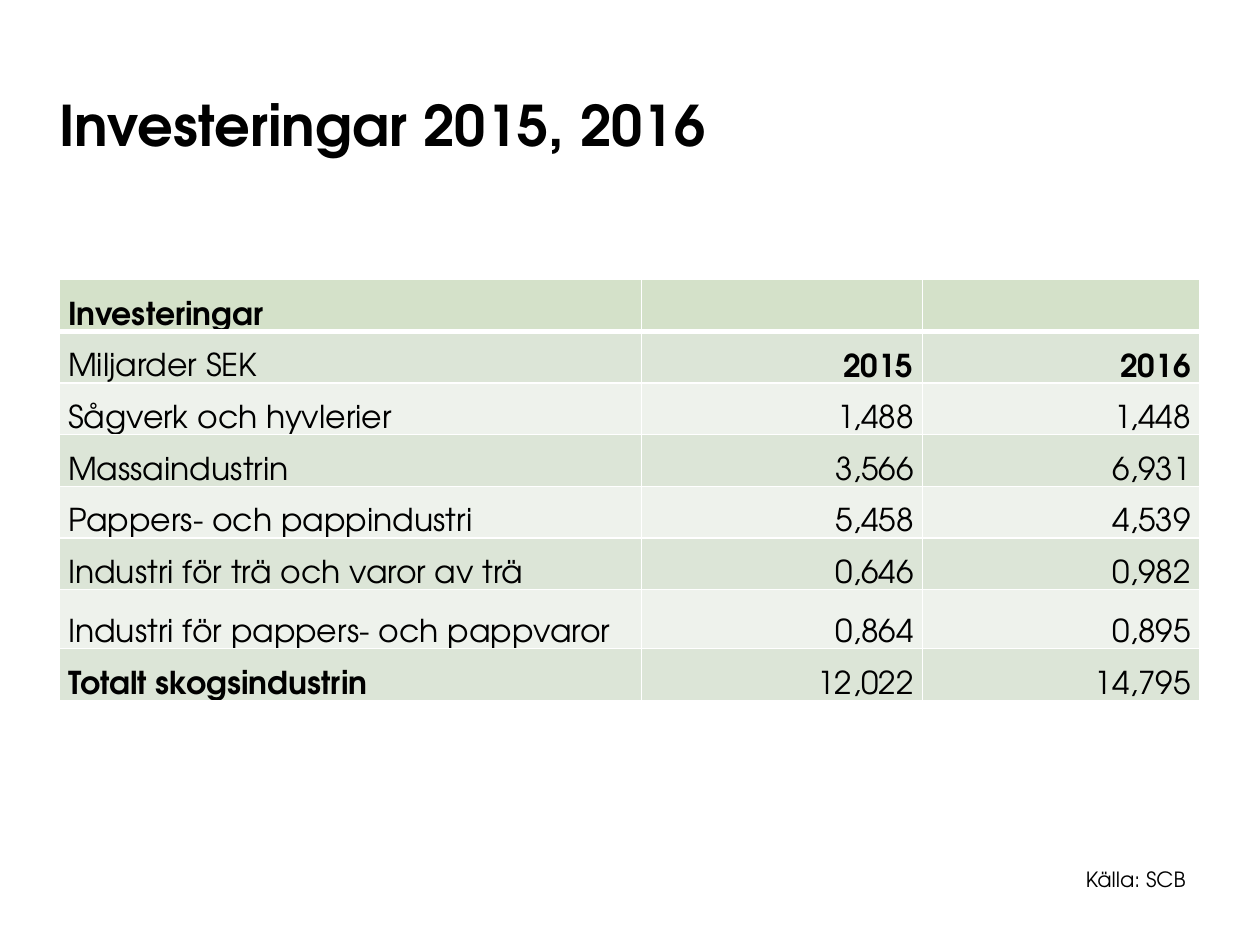
from lxml.etree import SubElement
from pptx import Presentation
from pptx.dml.color import RGBColor
from pptx.enum.text import MSO_ANCHOR, MSO_AUTO_SIZE, PP_ALIGN
from pptx.oxml.ns import qn
from pptx.util import Inches, Pt

# Content
TITLE = "Investeringar 2015, 2016"
SOURCE = "Källa: SCB"
ROWS = [
    ("Investeringar", "", ""),
    ("Miljarder SEK", "2015", "2016"),
    ("Sågverk och hyvlerier", "1,488", "1,448"),
    ("Massaindustrin", "3,566", "6,931"),
    ("Pappers- och pappindustri", "5,458", "4,539"),
    ("Industri för trä och varor av trä", "0,646", "0,982"),
    ("Industri för pappers- och pappvaror", "0,864", "0,895"),
    ("Totalt skogsindustrin", "12,022", "14,795"),
]
BOLD = {"Investeringar", "2015", "2016", "Totalt skogsindustrin"}

# Theme and layout
THEME = {
    "font": "TeX Gyre Adventor", "text": "000000", "line": "FFFFFF",
    "head": "D4E1C9", "bands": ("EEF2EC", "DCE5D7"),
    "title": 32, "cell": 18, "note": 12,
}
LEFT, WIDTH = 0.47, 9.06
COLS = (4.62, 2.23, 2.2)
HIGH, TALL, TALL_ROW = 0.41, 0.47, 6


def place(shape, *box):
    for name, size in zip(("left", "top", "width", "height"), box):
        setattr(shape, name, Inches(size))


def write(frame, text, size, bold=False, **para):
    p = frame.paragraphs[0]
    p.text = text
    for name, value in para.items():
        setattr(p, name, value)
    look = {"name": THEME["font"], "size": Pt(THEME[size]), "bold": bold}
    for name, value in look.items():
        setattr(p.font, name, value)
    p.font.color.rgb = RGBColor.from_string(THEME["text"])


def border(cell, low):
    props = cell._tc.get_or_add_tcPr()
    for side in "LRTB":
        points = low if side == "B" else 1
        line = SubElement(props, qn(f"a:ln{side}"), w=str(Pt(points)))
        fill = SubElement(line, qn("a:solidFill"))
        SubElement(fill, qn("a:srgbClr"), val=THEME["line"])


def style(cell, r, c):
    text = ROWS[r][c]
    edges = {"margin_left": 0.07, "margin_right": 0.07,
             "margin_top": 0, "margin_bottom": 0}
    for name, size in edges.items():
        setattr(cell, name, Inches(size))
    cell.vertical_anchor = MSO_ANCHOR.BOTTOM
    write(cell.text_frame, text, "cell", text in BOLD, line_spacing=Pt(12),
          alignment=PP_ALIGN.RIGHT if c else PP_ALIGN.LEFT)
    # Borders come before the fill in the cell properties
    border(cell, 1 if r else 3)
    cell.fill.solid()
    tone = THEME["bands"][r % 2] if r else THEME["head"]
    cell.fill.fore_color.rgb = RGBColor.from_string(tone)


def main():
    deck = Presentation()
    deck.slide_width, deck.slide_height = Inches(10), Inches(7.5)
    slide = deck.slides.add_slide(deck.slide_layouts[5])

    # Title
    title = slide.shapes.title
    place(title, LEFT, 0.42, WIDTH, 0.83)
    form = {"margin_left": 0, "margin_right": 0, "margin_top": 0,
            "margin_bottom": 0, "vertical_anchor": MSO_ANCHOR.BOTTOM,
            "auto_size": MSO_AUTO_SIZE.NONE}
    for name, value in form.items():
        setattr(title.text_frame, name, value)
    write(title.text_frame, TITLE, "title", True,
          line_spacing=0.8, alignment=PP_ALIGN.LEFT)

    # Table
    box = [Inches(n) for n in (LEFT, 2.22, WIDTH, HIGH * len(ROWS))]
    table = slide.shapes.add_table(len(ROWS), len(COLS), *box).table
    for col, size in zip(table.columns, COLS):
        col.width = Inches(size)
    for r, row in enumerate(table.rows):
        row.height = Inches(TALL if r == TALL_ROW else HIGH)
        for c, cell in enumerate(row.cells):
            style(cell, r, c)

    # Source note
    box = [Inches(n) for n in (8.52, 6.81, 1.01, 0.34)]
    note = slide.shapes.add_textbox(*box).text_frame
    note.word_wrap = True
    note.vertical_anchor = MSO_ANCHOR.MIDDLE
    write(note, SOURCE, "note")

    deck.save("out.pptx")


if __name__ == "__main__":
    main()
